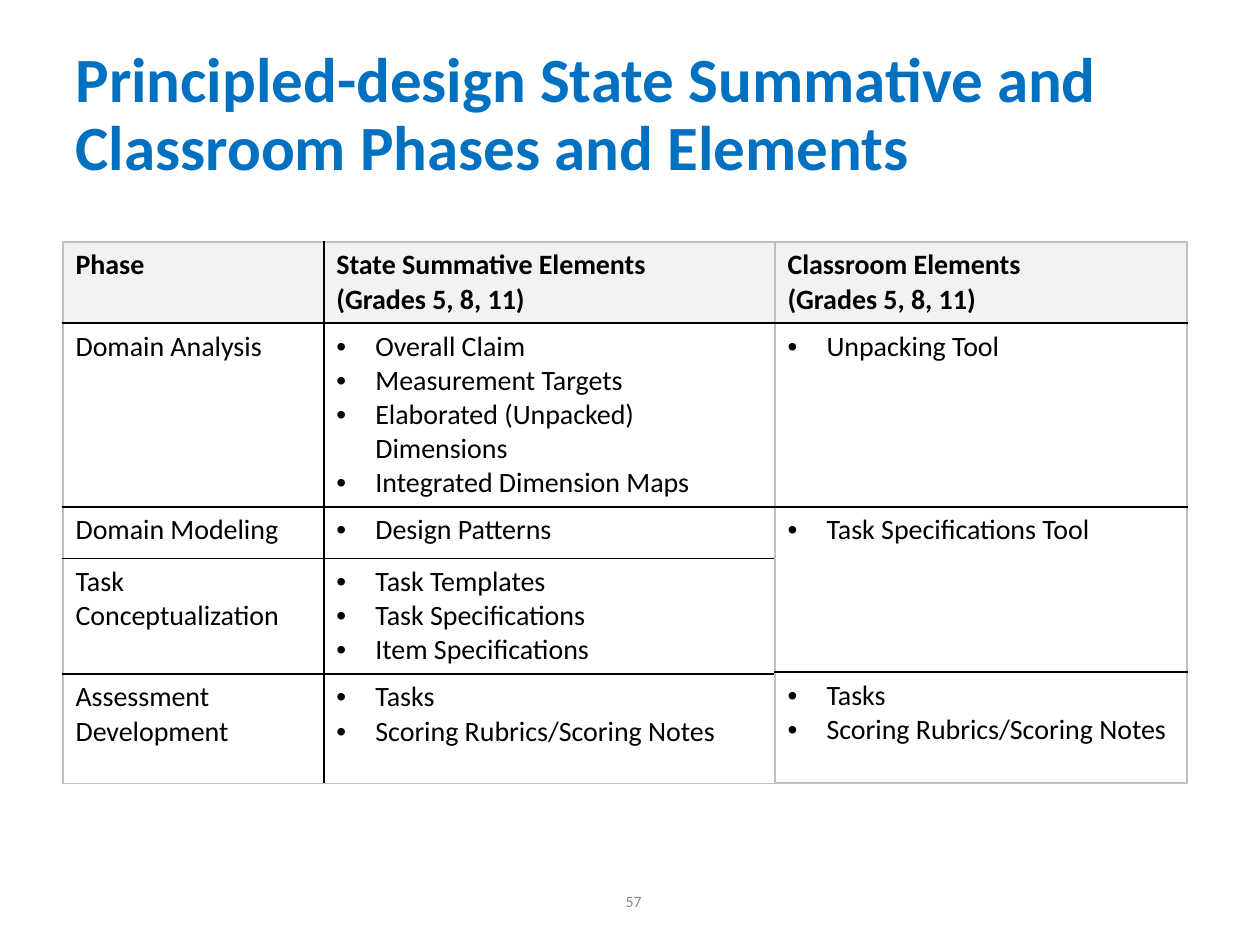
from lxml import etree
from pptx import Presentation
from pptx.dml.color import RGBColor as Rgb
from pptx.enum.text import MSO_ANCHOR as Anchor, MSO_AUTO_SIZE as Fit, PP_ALIGN as Align
from pptx.oxml import parse_xml
from pptx.oxml.ns import nsdecls, qn
from pptx.util import Inches as In, Pt

HUES = {"title": "0070C0", "text": "000000", "page": "888888",
        "head": "F2F2F2", "edge": "BFBFBF", "rule": "000000"}
TOP = 1.92
HEAD = "(Grades 5, 8, 11)"
LAST = ["Tasks", "Scoring Rubrics/Scoring Notes"]

# Each table: left edge, column widths, row heights, rows of cells.
# A cell is a list of paragraphs.
TABLES = [
    (0.5, [2.07, 3.58], [0.64, 1.45, 0.41, 0.91, 0.87], [
        [["Phase"], ["State Summative Elements", HEAD]],
        [["Domain Analysis"],
         ["Overall Claim", "Measurement Targets",
          "Elaborated (Unpacked) Dimensions", "Integrated Dimension Maps"]],
        [["Domain Modeling"], ["Design Patterns"]],
        [["Task Conceptualization"],
         ["Task Templates", "Task Specifications", "Item Specifications"]],
        [["Assessment Development"], LAST],
    ]),
    (6.15, [3.27], [0.64, 1.46, 1.31, 0.88], [
        [["Classroom Elements", HEAD]],
        [["Unpacking Tool"]],
        [["Task Specifications Tool"]],
        [LAST],
    ]),
]


def style(para, hue, **form):
    for key, val in {"name": "Calibri", **form}.items():
        setattr(para.font, key, val)
    para.font.color.rgb = Rgb.from_string(HUES[hue])


def frame(cell, outer):
    """Draw the four borders; outer tells which sides lie on the table's rim."""
    for side, rim in zip("LRTB", outer):
        hue = HUES["edge" if rim else "rule"]
        cell._tc.get_or_add_tcPr().append(parse_xml(
            f'<a:ln{side} {nsdecls("a")} w="12700"><a:solidFill>'
            f'<a:srgbClr val="{hue}"/></a:solidFill></a:ln{side}>'))


deck = Presentation()
deck.slide_width, deck.slide_height = In(10), In(7.5)
slide = deck.slides.add_slide(deck.slide_layouts[5])

# Title
title = slide.shapes.title
title.left, title.top, title.width, title.height = map(In, (0.5, 0.3, 9, 1.25))
body = title.text_frame
body.text = "Principled-design State Summative and Classroom Phases and Elements"
body.auto_size, body.vertical_anchor = Fit.NONE, Anchor.MIDDLE
para = body.paragraphs[0]
para.alignment, para.line_spacing = Align.LEFT, 0.9
style(para, "title", size=Pt(36), bold=True)

# Tables
for left, cols, rows, data in TABLES:
    table = slide.shapes.add_table(
        len(rows), len(cols), In(left), In(TOP),
        In(sum(cols)), In(sum(rows))).table
    table.first_row = table.horz_banding = False
    for col, width in zip(table.columns, cols):
        col.width = In(width)
    for row, height in zip(table.rows, rows):
        row.height = In(height)
    for r, line in enumerate(data):
        for c, items in enumerate(line):
            cell = table.cell(r, c)
            frame(cell, (c == 0, c == len(cols) - 1,
                         r == 0, r == len(rows) - 1))
            if r == 0:
                cell.fill.solid()
                cell.fill.fore_color.rgb = Rgb.from_string(HUES["head"])
            else:
                cell.fill.background()
            cell.text_frame.text = "\n".join(items)
            for para in cell.text_frame.paragraphs:
                if r > 0 and c == len(cols) - 1:
                    props = para._p.get_or_add_pPr()
                    props.set("marL", str(In(0.31)))
                    props.set("indent", str(-In(0.31)))
                    etree.SubElement(props, qn("a:buFont"), typeface="Arial")
                    etree.SubElement(props, qn("a:buChar"), char="•")
                style(para, "text", size=Pt(16), bold=r == 0)

# Page number
page = slide.shapes.add_textbox(*map(In, (2.94, 6.95, 2.25, 0.4))).text_frame
page.word_wrap, page.vertical_anchor = True, Anchor.MIDDLE
page.text = "57"
page.paragraphs[0].alignment = Align.RIGHT
style(page.paragraphs[0], "page", size=Pt(9))

deck.save("out.pptx")
